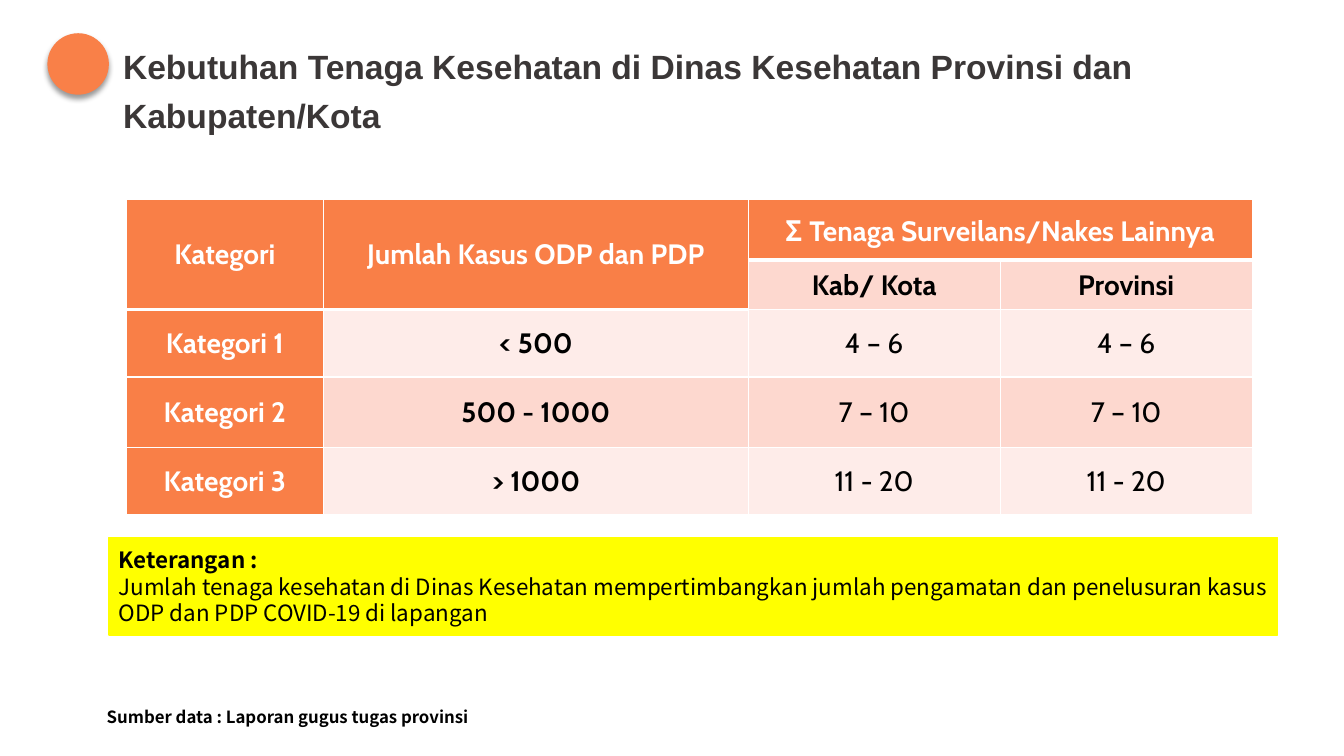
from lxml import etree
from pptx import Presentation
from pptx.dml.color import RGBColor
from pptx.enum import shapes, text
from pptx.oxml.ns import qn
from pptx.util import Inches, Pt

TITLE = "Kebutuhan Tenaga Kesehatan di Dinas Kesehatan Provinsi dan Kabupaten/Kota"
HEADERS = ["Kategori", "Jumlah Kasus ODP dan PDP"]
STAFF_HEADER = [("Σ ", "Noto Sans CJK SC"), ("Tenaga Surveilans/Nakes Lainnya", "Cabin")]
STAFF_COLUMNS = ["Kab/ Kota", "Provinsi"]
CATEGORIES = [
    ("Kategori 1", "< 500", "4 – 6", "4 – 6"),
    ("Kategori 2", "500 - 1000", "7 – 10", "7 – 10"),
    ("Kategori 3", "> 1000", "11 - 20", "11 - 20"),
]
NOTE_HEADING = "Keterangan :"
NOTE = ("Jumlah tenaga kesehatan di Dinas Kesehatan mempertimbangkan jumlah pengamatan "
        "dan penelusuran kasus ODP dan PDP COVID-19 di lapangan")
SOURCE = "Sumber data : Laporan gugus tugas provinsi"

COLUMN_WIDTHS = [1.96, 4.21, 2.5, 2.5]
ROW_HEIGHTS = [0.6, 0.49, 0.67, 0.7, 0.67]
ORANGE, PINK, PALE = "F97F47", "FDD8CF", "FEECE9"
WHITE, BLACK, YELLOW = "FFFFFF", "000000", "FFFF00"
BODY_FONT, TABLE_FONT = "Noto Sans CJK SC", "Cabin"


def color(value):
    return RGBColor.from_string(value)


def box(left, top, width, height):
    return [Inches(length) for length in (left, top, width, height)]


def fill(target, value):
    target.fill.solid()
    target.fill.fore_color.rgb = color(value)


def add_run(paragraph, words, size, font, value, bold=True):
    run = paragraph.add_run()
    run.text = words
    run.font.size = Pt(size)
    run.font.name = font
    run.font.bold = bold
    run.font.color.rgb = color(value)
    # Symbols take the East Asian font
    etree.SubElement(run.font._element, qn("a:ea"), typeface=font)


def add_border(cell, side, points):
    line = etree.SubElement(cell._tc.get_or_add_tcPr(), qn("a:" + side), w=str(Pt(points)))
    solid = etree.SubElement(line, qn("a:solidFill"))
    etree.SubElement(solid, qn("a:srgbClr"), val=WHITE)


def format_cell(cell, runs, background, value, bold=True, header=False):
    for side in ("lnL", "lnR", "lnT", "lnB"):
        add_border(cell, side, 3 if header and side == "lnB" else 1)
    fill(cell, background)
    cell.vertical_anchor = text.MSO_ANCHOR.MIDDLE
    cell.margin_left = cell.margin_right = cell.margin_top = Inches(0.01)
    cell.margin_bottom = 0
    paragraph = cell.text_frame.paragraphs[0]
    paragraph.alignment = text.PP_ALIGN.CENTER
    if header:
        paragraph.line_spacing = 0.9
    else:
        paragraph.space_before = paragraph.space_after = Pt(1.4)
    for words, font in runs:
        add_run(paragraph, words, 20, font, value, bold)


presentation = Presentation()
presentation.slide_width, presentation.slide_height = Inches(13.33), Inches(7.5)
slide = presentation.slides.add_slide(presentation.slide_layouts[5])

# Title
title = slide.shapes.title
title.left, title.top, title.width, title.height = box(1.12, 0.33, 11.43, 1.07)
frame = title.text_frame
frame.word_wrap = True
frame.auto_size = text.MSO_AUTO_SIZE.NONE
frame.vertical_anchor = text.MSO_ANCHOR.TOP
paragraph = frame.paragraphs[0]
paragraph.alignment = text.PP_ALIGN.LEFT
paragraph.line_spacing = 1.2
add_run(paragraph, TITLE, 24, "Arial", "3B3737")

# Title marker with a soft shadow below
marker = slide.shapes.add_shape(shapes.MSO_SHAPE.OVAL, *box(0.47, 0.33, 0.61, 0.61))
fill(marker, "F98048")
marker.line.fill.background()
marker.shadow.inherit = False
effects = marker._element.spPr.find(qn("a:effectLst"))
shadow = etree.SubElement(effects, qn("a:outerShdw"), blurRad=str(Pt(4)), dist=str(Pt(3)),
                          dir="5400000", rotWithShape="0")
shade = etree.SubElement(shadow, qn("a:srgbClr"), val=BLACK)
etree.SubElement(shade, qn("a:alpha"), val="40000")

# Staffing table
table = slide.shapes.add_table(
    len(ROW_HEIGHTS), len(COLUMN_WIDTHS),
    *box(1.25, 1.98, sum(COLUMN_WIDTHS), sum(ROW_HEIGHTS))).table
for column, width in zip(table.columns, COLUMN_WIDTHS):
    column.width = Inches(width)
for row, height in zip(table.rows, ROW_HEIGHTS):
    row.height = Inches(height)

for index, header in enumerate(HEADERS):
    table.cell(0, index).merge(table.cell(1, index))
    format_cell(table.cell(0, index), [(header, TABLE_FONT)], ORANGE, WHITE, header=True)
table.cell(0, 2).merge(table.cell(0, 3))
format_cell(table.cell(0, 2), STAFF_HEADER, ORANGE, WHITE, header=True)
for index, header in enumerate(STAFF_COLUMNS, start=2):
    format_cell(table.cell(1, index), [(header, TABLE_FONT)], PINK, BLACK)

for row_index, values in enumerate(CATEGORIES, start=2):
    band = PINK if row_index % 2 else PALE
    for index, value in enumerate(values):
        first = index == 0
        format_cell(table.cell(row_index, index), [(value, TABLE_FONT)],
                    ORANGE if first else band, WHITE if first else BLACK, bold=index < 2)

# Explanatory note
note = slide.shapes.add_shape(shapes.MSO_SHAPE.RECTANGLE, *box(1.08, 5.33, 11.59, 0.97))
note.shadow.inherit = False
fill(note, YELLOW)
note.line.color.rgb = color(YELLOW)
note.line.width = Pt(1)
frame = note.text_frame
frame.word_wrap = True
frame.vertical_anchor = text.MSO_ANCHOR.MIDDLE
for paragraph, words, bold in ((frame.paragraphs[0], NOTE_HEADING, True),
                               (frame.add_paragraph(), NOTE, False)):
    paragraph.alignment = text.PP_ALIGN.LEFT
    add_run(paragraph, words, 16, BODY_FONT, BLACK, bold)

# Data source
source = slide.shapes.add_textbox(*box(0.96, 6.96, 4.31, 0.3))
source.text_frame.word_wrap = True
add_run(source.text_frame.paragraphs[0], SOURCE, 12, BODY_FONT, BLACK)

presentation.save("out.pptx")
